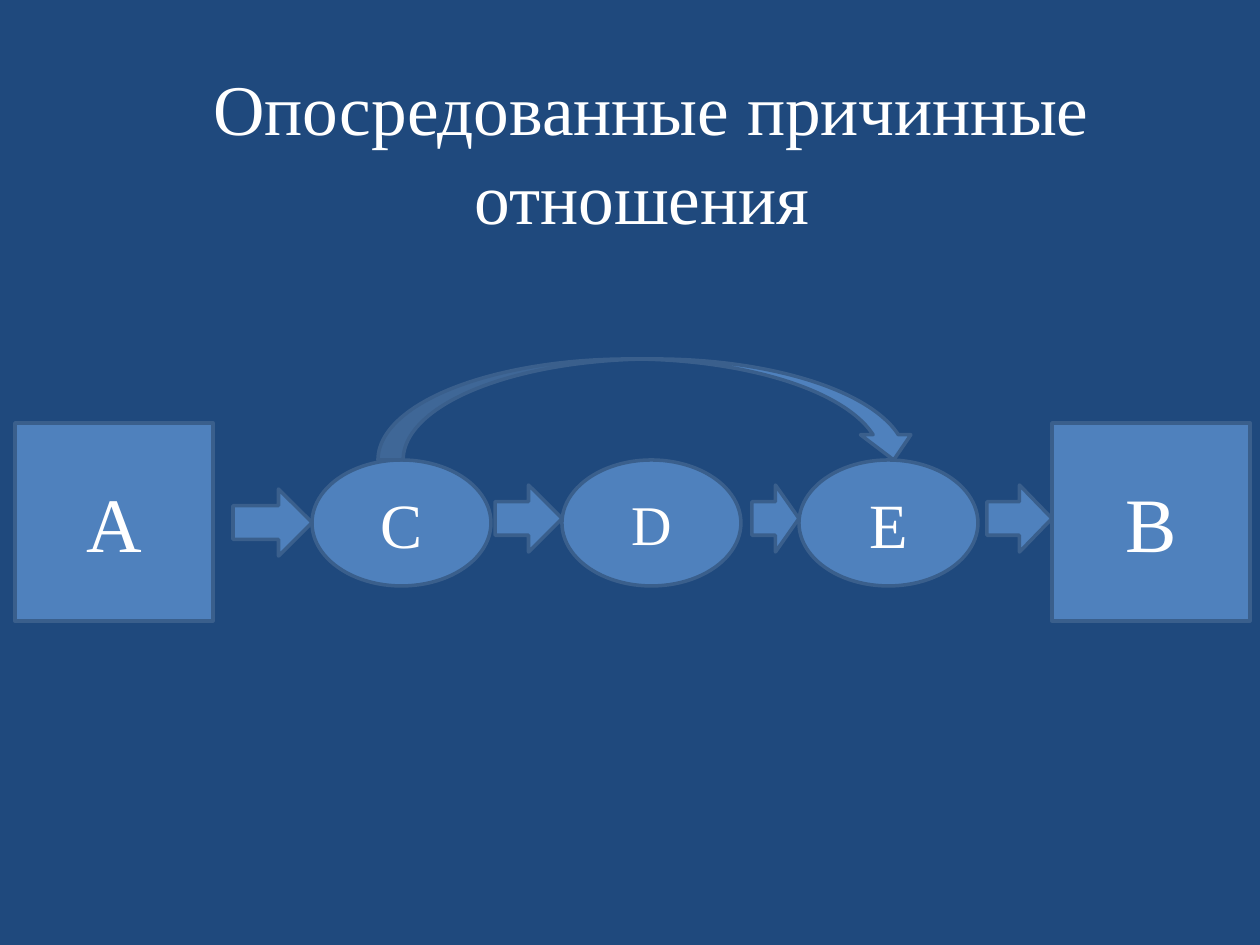
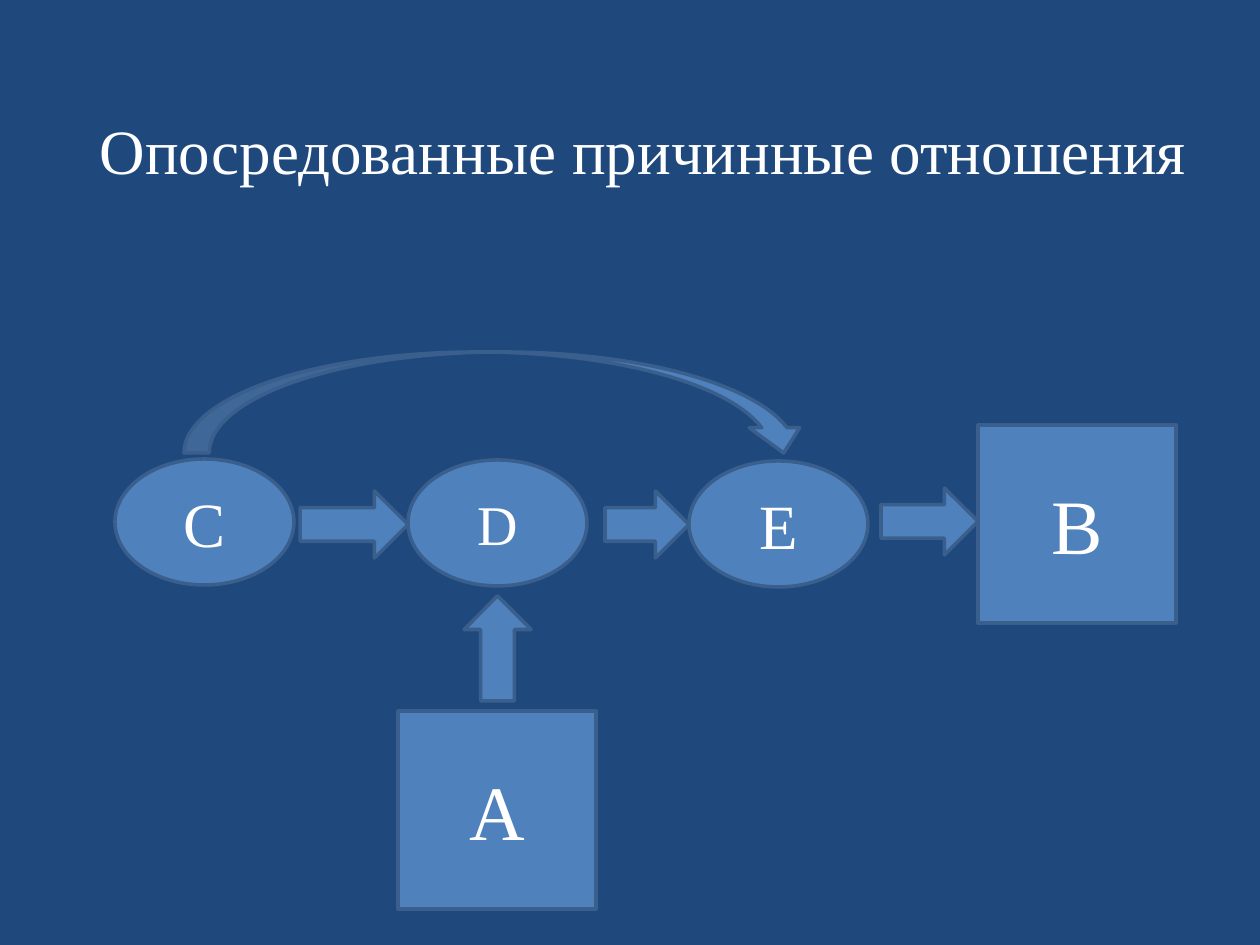
from pptx import Presentation
from pptx.dml.color import RGBColor
from pptx.enum.shapes import MSO_SHAPE
from pptx.enum.text import MSO_ANCHOR, PP_ALIGN
from pptx.util import Emu, Pt

TITLE = "Опосредованные причинные отношения "
BACKGROUND, FILL, OUTLINE, WHITE = "1F497D", "4F81BD", "3A5F8C", "FFFFFF"
FONT = "Times New Roman"
PAGE_SIZE = (1260, 945)
TITLE_FRAME = (84, 66, 1134, 157)
TITLE_FORMAT = {"margin_top": 14, "margin_bottom": 4}
ARROW_HEIGHT = 67
ARC_HEIGHT = 101

NODE_KINDS = {
    "square": (MSO_SHAPE.RECTANGLE, 198, 198),
    "oval": (MSO_SHAPE.OVAL, 179, 126),
}
NODES = {
    "А": ("square", 44),
    "В": ("square", 44),
    "C": ("oval", 36),
    "D": ("oval", 32),
    "Е": ("oval", 36),
}

DIAGRAMS = [
    {
        "title_size": 40.7,
        "line_spacing": 1.04,
        "places": {"А": (15, 423), "В": (1052, 423), "C": (312, 460),
                   "D": (562, 460), "Е": (799, 460)},
        "arc": (378, 359, 541),
        "arrows": [("Е", 47, 485), ("D", 67, 485), ("В", 65, 485), ("C", 79, 489)],
        "rising": [],
    },
    {
        "title_size": 36,
        "line_spacing": 1.0,
        "places": {"А": (398, 711), "В": (978, 425), "C": (115, 459),
                   "D": (408, 460), "Е": (689, 461)},
        "arc": (184, 352, 625),
        "arrows": [("Е", 84, 491), ("D", 108, 491), ("В", 97, 488)],
        "rising": [("D", 105, 596)],
    },
]


def px(length):
    return Emu(round(length * 914400 / 126))


def color(value):
    return RGBColor.from_string(value)


def write(box, text, size, spacing=1.0):
    frame = box.text_frame
    frame.word_wrap = True
    frame.vertical_anchor = MSO_ANCHOR.MIDDLE
    para = frame.paragraphs[0]
    para.alignment = PP_ALIGN.CENTER
    para.line_spacing = spacing
    span = para.add_run()
    span.text = text
    for name, value in {"name": FONT, "size": Pt(size)}.items():
        setattr(span.font, name, value)
    span.font.color.rgb = color(WHITE)


def add_figure(page, kind, left, top, width, height):
    figure = page.shapes.add_shape(kind, px(left), px(top), px(width), px(height))
    figure.shadow.inherit = False
    figure.fill.solid()
    figure.fill.fore_color.rgb = color(FILL)
    figure.line.color.rgb = color(OUTLINE)
    figure.line.width = Pt(2)
    return figure


def add_title(page, size, spacing):
    box = page.shapes.add_textbox(*map(px, TITLE_FRAME))
    for name, value in TITLE_FORMAT.items():
        setattr(box.text_frame, name, px(value))
    write(box, TITLE, size, spacing)


def draw_diagram(page, diagram):
    places = diagram["places"]
    add_title(page, diagram["title_size"], diagram["line_spacing"])
    for letter, (kind, size) in NODES.items():
        preset, width, height = NODE_KINDS[kind]
        write(add_figure(page, preset, *places[letter], width, height), letter, size)
    add_figure(page, MSO_SHAPE.CURVED_DOWN_ARROW, *diagram["arc"], ARC_HEIGHT)
    for target, length, top in diagram["arrows"]:
        left = places[target][0] - length
        add_figure(page, MSO_SHAPE.RIGHT_ARROW, left, top, length, ARROW_HEIGHT)
    for target, length, tip in diagram["rising"]:
        target_width = NODE_KINDS[NODES[target][0]][1]
        left = places[target][0] + (target_width - length) / 2
        top = tip + (length - ARROW_HEIGHT) / 2
        arrow = add_figure(page, MSO_SHAPE.RIGHT_ARROW, left, top, length, ARROW_HEIGHT)
        arrow.rotation = 270


def main():
    deck = Presentation()
    deck.slide_width, deck.slide_height = map(px, PAGE_SIZE)
    for diagram in DIAGRAMS:
        page = deck.slides.add_slide(deck.slide_layouts[6])
        page.background.fill.solid()
        page.background.fill.fore_color.rgb = color(BACKGROUND)
        draw_diagram(page, diagram)
    deck.save("out.pptx")


if __name__ == "__main__":
    main()
